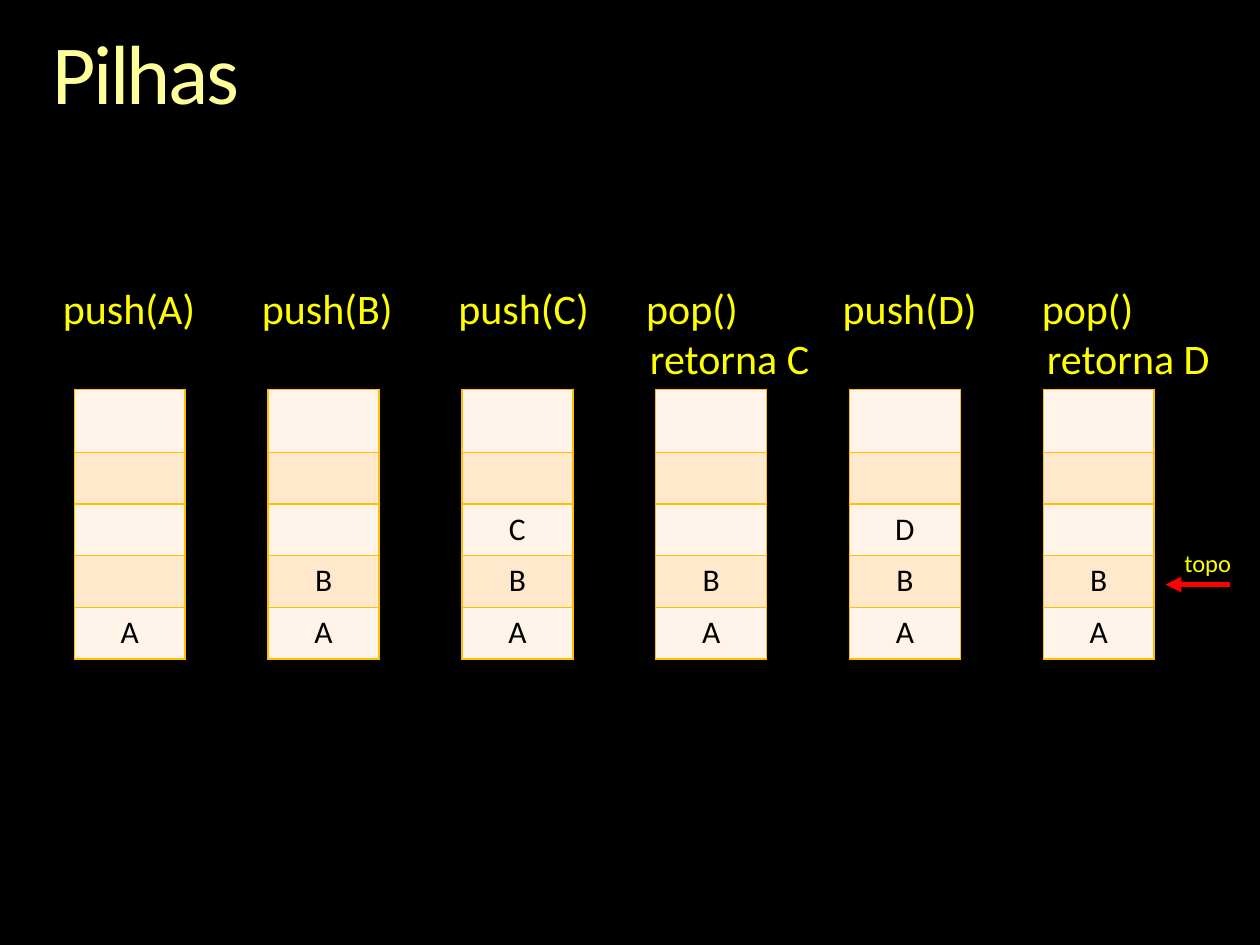
"""Build the slide that shows a stack after each push and pop."""
from dataclasses import dataclass

from lxml import etree
from pptx import Presentation
from pptx import util as u
from pptx.dml.color import RGBColor
from pptx.enum import shapes, text
from pptx.oxml import ns

FONT = "Calibri"
YELLOW = "FFFF00"
BANDS = ("FFF4E7", "FFE8CC")
ROW_HEIGHTS = (0.5, 0.41, 0.41, 0.41, 0.41)
STACK_LEFT, STACK_TOP, STACK_WIDTH, STACK_PITCH = 0.59, 3.09, 0.88, 1.538


@dataclass(frozen=True)
class LabelLine:
    words: tuple[str, ...]
    stops: tuple[float, ...]


STACKS = ("A", "AB", "ABC", "AB", "ABD", "AB")
LABEL_LINES = (
    LabelLine(("push(A)", "push(B)", "push(C)", "pop()", "push(D)", "pop()"),
              (0.21, 1.79, 3.35, 4.84, 6.4, 7.98)),
    LabelLine(("retorna C", "retorna D"), (4.87, 8.02)),
)


def rgb(value: str) -> RGBColor:
    return RGBColor.from_string(value)


def add_xml(parent, tag: str, **attributes: str):
    return etree.SubElement(parent, ns.qn(tag), attributes)


def apply_format(target, **values) -> None:
    for key, value in values.items():
        setattr(target, key, value)


def format_font(font, size: float, color: str) -> None:
    apply_format(font, name=FONT, size=u.Pt(size))
    font.color.rgb = rgb(color)


def draw_title(slide) -> None:
    title = slide.shapes.title
    apply_format(title, left=u.Inches(0.42), top=u.Inches(0.25),
                 width=u.Inches(9.17), height=u.Inches(0.73))
    frame = title.text_frame
    apply_format(frame, margin_left=0, margin_top=0, margin_right=0, margin_bottom=0,
                 word_wrap=True, vertical_anchor=text.MSO_ANCHOR.TOP,
                 auto_size=text.MSO_AUTO_SIZE.SHAPE_TO_FIT_TEXT)
    heading = frame.paragraphs[0]
    apply_format(heading, alignment=text.PP_ALIGN.LEFT, line_spacing=0.9)
    run = heading.add_run()
    run.text = "Pilhas"
    format_font(run.font, 48, "FFFF99")
    run._r.get_or_add_rPr().set("spc", "-150")


def draw_labels(slide) -> None:
    labels = slide.shapes.add_textbox(u.Inches(0.19), u.Inches(2.19),
                                      u.Inches(9.63), u.Inches(0.91))
    frame = labels.text_frame
    apply_format(frame, word_wrap=True, auto_size=text.MSO_AUTO_SIZE.SHAPE_TO_FIT_TEXT)
    for index, line in enumerate(LABEL_LINES):
        paragraph = frame.add_paragraph() if index else frame.paragraphs[0]
        tabs = add_xml(paragraph._p.get_or_add_pPr(), "a:tabLst")
        for stop in line.stops:
            add_xml(tabs, "a:tab", pos=str(u.Inches(stop)), algn="l")
        run = paragraph.add_run()
        run.text = "".join("\t" + word for word in line.words)
        format_font(run.font, 24, YELLOW)


def format_cell(cell, fill: str) -> None:
    properties = cell._tc.get_or_add_tcPr()
    for side in ("a:lnL", "a:lnR", "a:lnT", "a:lnB"):
        border = add_xml(properties, side, w=str(u.Pt(1)))
        add_xml(add_xml(border, "a:solidFill"), "a:srgbClr", val="FFC000")
    cell.fill.solid()
    cell.fill.fore_color.rgb = rgb(fill)


def draw_stack(slide, left: float, items: str) -> None:
    frame = slide.shapes.add_table(len(ROW_HEIGHTS), 1, u.Inches(left), u.Inches(STACK_TOP),
                                   u.Inches(STACK_WIDTH), u.Inches(sum(ROW_HEIGHTS)))
    stack = frame.table
    apply_format(stack, first_row=False, horz_banding=False)
    slots = items[::-1].rjust(len(ROW_HEIGHTS))
    for index, (height, item) in enumerate(zip(ROW_HEIGHTS, slots)):
        stack.rows[index].height = u.Inches(height)
        cell = stack.cell(index, 0)
        format_cell(cell, BANDS[index % 2])
        if item.strip():
            paragraph = cell.text_frame.paragraphs[0]
            paragraph.alignment = text.PP_ALIGN.CENTER
            run = paragraph.add_run()
            run.text = item
            format_font(run.font, 18, "000000")


def draw_top_marker(slide) -> None:
    marker = slide.shapes.add_group_shape()
    arrow = marker.shapes.add_connector(shapes.MSO_CONNECTOR.STRAIGHT, u.Inches(9.76),
                                        u.Inches(4.64), u.Inches(9.25), u.Inches(4.64))
    arrow.line.color.rgb = rgb("FF0000")
    arrow.line.width = u.Pt(3)
    add_xml(arrow.line._get_or_add_ln(), "a:tailEnd", type="triangle")
    add_xml(arrow._element.spPr, "a:effectLst")
    caption = marker.shapes.add_textbox(u.Inches(9.28), u.Inches(4.3),
                                        u.Inches(0.61), u.Inches(0.34))
    frame = caption.text_frame
    apply_format(frame, word_wrap=False, auto_size=text.MSO_AUTO_SIZE.SHAPE_TO_FIT_TEXT)
    paragraph = frame.paragraphs[0]
    paragraph.alignment = text.PP_ALIGN.CENTER
    run = paragraph.add_run()
    run.text = "topo"
    format_font(run.font, 14, YELLOW)


def main() -> None:
    deck = Presentation()
    apply_format(deck, slide_width=u.Inches(10), slide_height=u.Inches(7.5))
    slide = deck.slides.add_slide(deck.slide_layouts[5])
    slide.background.fill.solid()
    slide.background.fill.fore_color.rgb = rgb("000000")
    draw_title(slide)
    draw_labels(slide)
    for index, items in enumerate(STACKS):
        draw_stack(slide, STACK_LEFT + index * STACK_PITCH, items)
    draw_top_marker(slide)
    deck.save("out.pptx")


if __name__ == "__main__":
    main()
